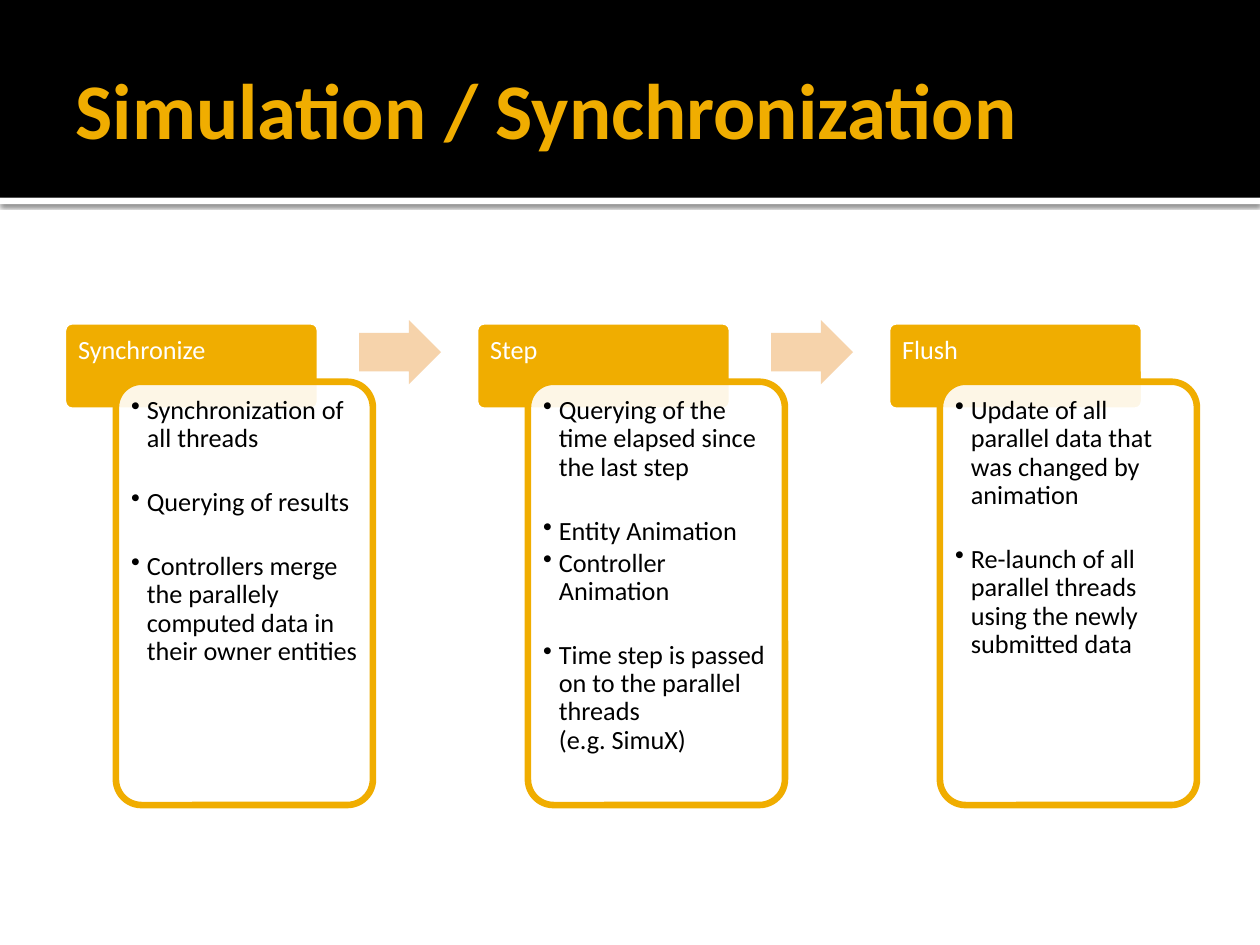
from lxml import etree
from pptx import Presentation
from pptx.dml.color import RGBColor
from pptx.enum.shapes import MSO_SHAPE
from pptx.enum.text import MSO_ANCHOR, MSO_AUTO_SIZE, PP_ALIGN
from pptx.oxml import parse_xml
from pptx.oxml.ns import nsdecls, qn
from pptx.util import Pt

RECT, ROUND, ARROW = MSO_SHAPE.RECTANGLE, MSO_SHAPE.ROUNDED_RECTANGLE, MSO_SHAPE.RIGHT_ARROW
TOP, MIDDLE = MSO_ANCHOR.TOP, MSO_ANCHOR.MIDDLE
LEFT, NO_FIT = PP_ALIGN.LEFT, MSO_AUTO_SIZE.NONE

GOLD, PEACH, WHITE, BLACK = "F0AD00", "F6D3AB", "FFFFFF", "000000"
PITCH = 235.44
TIGHT, GAP = 2, 20.25
STAGES = [
    ("Synchronize", [
        ("Synchronization of all threads", GAP),
        ("Querying of results", GAP),
        ("Controllers merge the parallely computed data in their owner entities", TIGHT)]),
    ("Step", [
        ("Querying of the time elapsed since the last step", GAP),
        ("Entity Animation", TIGHT),
        ("Controller Animation", GAP),
        ("Time step is passed on to the parallel threads\n(e.g. SimuX)", TIGHT)]),
    ("Flush", [
        ("Update of all parallel data that was changed by animation", GAP),
        ("Re-launch of all parallel threads using the newly submitted data", TIGHT)]),
]


def color(value):
    return RGBColor.from_string(value)


class Deck:
    """Slide style and the current slide, with one method per kind of element."""

    font, size, padding, corner, border = "Calibri", 15, 8.64, 0.1, 3.78

    def __init__(self):
        self.prs = Presentation()
        self.prs.slide_width, self.prs.slide_height = Pt(720), Pt(540)
        self.slide = self.prs.slides.add_slide(self.prs.slide_layouts[5])

    def shape(self, kind, x, y, w, h, fill, line=None):
        sp = self.slide.shapes.add_shape(kind, Pt(x), Pt(y), Pt(w), Pt(h))
        sp.shadow.inherit = False
        sp.fill.solid()
        sp.fill.fore_color.rgb = color(fill)
        if line:
            sp.line.color.rgb = color(line)
            sp.line.width = Pt(self.border)
        else:
            sp.line.fill.background()
        return sp

    def run(self, p, text, fill, size=None, bold=False):
        r = p.add_run()
        r.text = text
        r.font.name, r.font.size, r.font.bold = self.font, Pt(size or self.size), bold
        r.font.color.rgb = color(fill)

    def frame(self, sp, anchor, insets):
        tf = sp.text_frame
        tf.word_wrap, tf.auto_size, tf.vertical_anchor = True, NO_FIT, anchor
        tf.margin_left, tf.margin_top, tf.margin_right, tf.margin_bottom = map(Pt, insets)
        return tf

    def title(self, text):
        sp = self.slide.shapes.title
        sp.left, sp.top, sp.width, sp.height = Pt(36), Pt(12.24), Pt(648), Pt(98.64)
        p = self.frame(sp, MIDDLE, (7.2, 3.6, 3.6, 3.6)).paragraphs[0]
        p.alignment = LEFT
        self.run(p, text, GOLD, 45, True)
        tree = sp.element.getparent()
        tree.append(sp.element)

    def banner(self):
        strip = self.shape(RECT, 0, 113.04, 720, 3.6, WHITE)
        shadow = parse_xml(
            f'<a:outerShdw {nsdecls("a")} blurRad="{Pt(2.5)}" dist="{Pt(0.8)}" dir="5400000">'
            f'<a:srgbClr val="{BLACK}"><a:alpha val="60000"/></a:srgbClr></a:outerShdw>')
        strip.element.spPr.find(qn("a:effectLst")).append(shadow)
        self.shape(RECT, 0, 0, 720, 113.04, BLACK)

    def panel(self, x, y, w, h, fill, line):
        sp = self.shape(ROUND, x, y, w, h, fill, line)
        sp.adjustments[0] = self.corner
        inset = round(self.padding - 0.29 * self.corner * min(w, h), 2)
        return sp, self.frame(sp, TOP, (inset,) * 4)

    def header(self, x, text):
        tf = self.panel(x, 183.6, 146.88, 51.12, GOLD, WHITE)[1]
        p = tf.paragraphs[0]
        p.alignment, p.line_spacing = LEFT, 0.9
        self.run(p, text, WHITE)

    def card(self, x, items):
        sp, tf = self.panel(x, 218.16, 146.88, 241.92, WHITE, GOLD)
        rgb = sp.fill._xPr.find(qn("a:solidFill"))[0]
        etree.SubElement(rgb, qn("a:alpha"), val="90000")
        for i, (text, after) in enumerate(items):
            p = tf.add_paragraph() if i else tf.paragraphs[0]
            self.bullet(p, text, after)

    def bullet(self, p, text, after):
        p.alignment, p.line_spacing, p.space_after = LEFT, 0.9, Pt(after)
        pPr = p._p.get_or_add_pPr()
        pPr.set("marL", str(Pt(9)))
        pPr.set("indent", str(-Pt(9)))
        etree.SubElement(pPr, qn("a:buChar"), char="•")
        for i, line in enumerate(text.split("\n")):
            if i:
                p.add_line_break()
            self.run(p, line, BLACK)

    def arrow(self, x):
        sp = self.shape(ARROW, x, 182.88, 46.8, 36.72, PEACH)
        sp.adjustments[0], sp.adjustments[1] = 0.6, 0.5


def main():
    deck = Deck()
    deck.banner()
    deck.title("Simulation / Synchronization")
    for i, (name, items) in enumerate(STAGES):
        x = 36 + i * PITCH
        deck.header(x, name)
        deck.card(x + 30.24, items)
        if i < len(STAGES) - 1:
            deck.arrow(x + 169.2)
    deck.prs.save("out.pptx")


if __name__ == "__main__":
    main()
